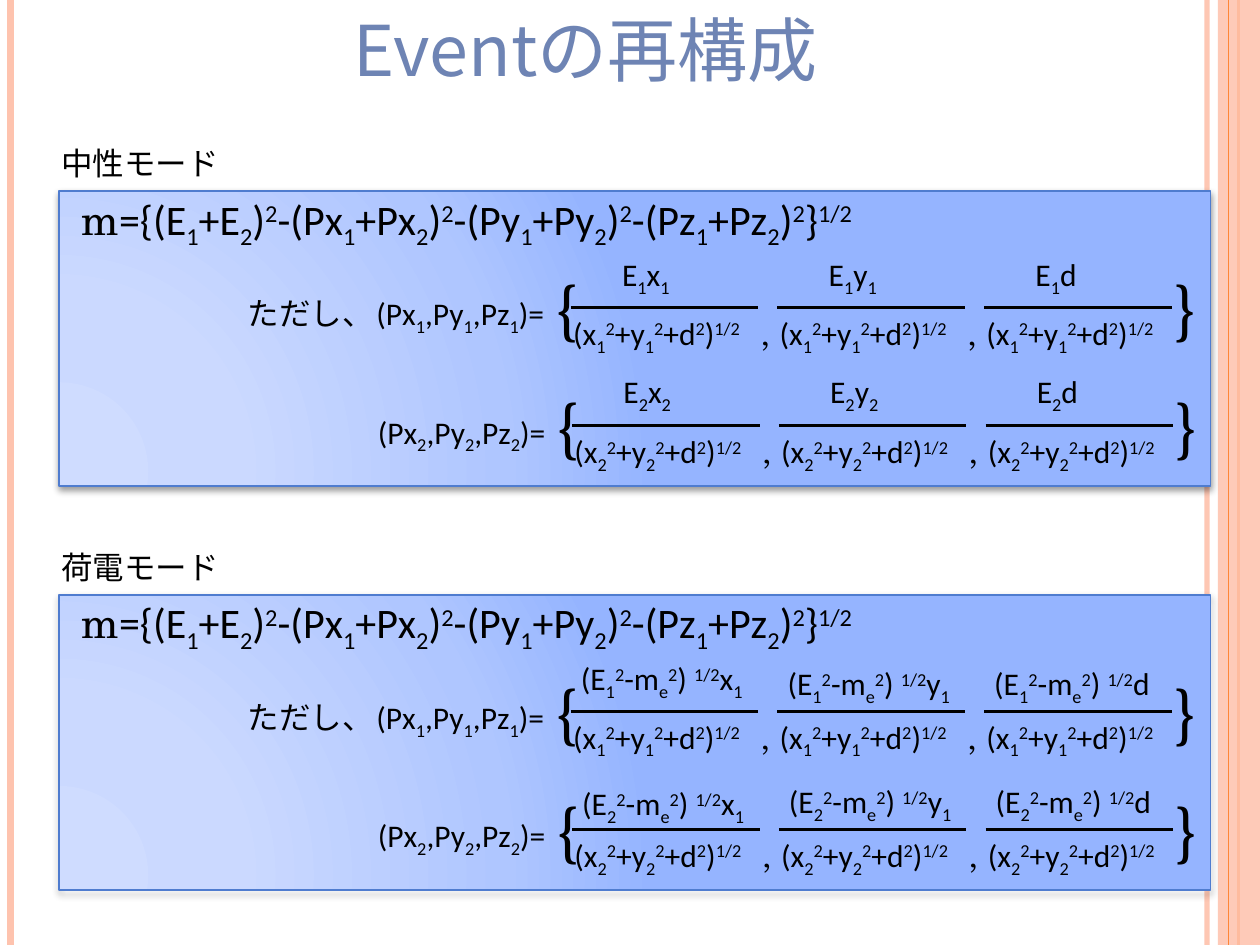
import pptx
import pptx.util
import pptx.dml.color
import pptx.enum.shapes
import pptx.enum.text
import pptx.oxml
import pptx.oxml.ns

Pt = pptx.util.Pt
LATIN, SERIF, JAPANESE = "Calibri", "TeX Gyre Schola", "Noto Sans CJK JP"
NAMESPACE = 'xmlns:a="http://schemas.openxmlformats.org/drawingml/2006/main"'
BASELINES = {"_": "-25000", "^": "30000"}

TITLE = "Eventの再構成"
PROVISO = "ただし、"
MASS = ("={(E|_1|+E|_2|)|^2|-(Px|_1|+Px|_2|)|^2|-(Py|_1|+Py|_2|)|^2"
        "|-(Pz|_1|+Pz|_2|)|^2|}|^1/2")
MOMENTUM = "(Px|_#|,Py|_#|,Pz|_#|)="
DENOMINATOR = "(x|_#|^2|+y|_#|^2|+d|^2|)|^1/2"
CHARGED_ENERGY = "(E|_#|^2|-m|_e|^2|) |^1/2|"
MODES = [
    {"name": "中性モード", "top": 109.3, "indent": 28, "widths": (44, 44, 39),
     "numerators": [("E|_#|x|_#", "E|_#|y|_#", "E|_#|d")] * 2,
     "rises": [(33, 33, 33), (32.5, 32.5, 32.5)]},
    {"name": "荷電モード", "top": 340, "indent": 4.4, "widths": (114.5, 114.5, 110),
     "numerators": [tuple(CHARGED_ENERGY + end for end in ("x|_1", "y|_1", "d"))] * 2,
     "rises": [(33, 36, 36), (37, 36, 36)]},
]
STRIPES = [(689.8, "FEC3AE", 3, 93), (6, "FEC3AE", 4.5, 100),
           (707.8, "FE8637", 1.5, 100), (702, "FE8637", 0.75, 100)]
GRADIENT = [(0, "CFDCFF"), (30, "CBD9FF"), (75, "AFC6FF"), (100, "95B4FF")]

PANEL_LEFT, PANEL_WIDTH, PANEL_HEIGHT = 33.8, 658, 168.5
ROW_STEP, ROW_SHIFT = 67.5, 0.8
COLUMN_LEFT, COLUMN_STEP = 320.4, 118.1
BAR_DROP = 66.5


def color(value):
    return pptx.dml.color.RGBColor.from_string(value)


def apply(target, values):
    for name, value in values.items():
        setattr(target, name, value)


def set_alpha(element, percent):
    if percent < 100:
        fill_color = next(element.iter(pptx.oxml.ns.qn("a:srgbClr")))
        fill_color.append(pptx.oxml.parse_xml(f'<a:alpha {NAMESPACE} val="{percent * 1000}"/>'))


def add_line(shapes, start, end, line_color, width, alpha=100):
    line = shapes.add_connector(pptx.enum.shapes.MSO_CONNECTOR.STRAIGHT,
                                *[Pt(value) for value in start + end])
    line.line.color.rgb = color(line_color)
    line.line.width = Pt(width)
    properties = line._element.spPr
    set_alpha(properties, alpha)
    properties.append(pptx.oxml.parse_xml(f"<a:effectLst {NAMESPACE}/>"))


def add_text(shapes, box, pieces, size=18, wrap=True, text_color="000000", align=None):
    frame = shapes.add_textbox(*[Pt(value) for value in box]).text_frame
    apply(frame, {"word_wrap": wrap,
                  "auto_size": pptx.enum.text.MSO_AUTO_SIZE.SHAPE_TO_FIT_TEXT})
    paragraph = frame.paragraphs[0]
    paragraph.alignment = align
    for markup, font in pieces:
        for part in markup.split("|"):
            run = paragraph.add_run()
            run.text = part.lstrip("_^")
            apply(run.font, {"size": Pt(size), "name": font})
            run.font.color.rgb = color(text_color)
            properties = run._r.get_or_add_rPr()
            if part[0] in BASELINES:
                properties.set("baseline", BASELINES[part[0]])
            if font == JAPANESE:
                properties.append(pptx.oxml.parse_xml(
                    f'<a:ea {NAMESPACE} typeface="{font}"/>'))


def add_rectangle(shapes, box):
    return shapes.add_shape(pptx.enum.shapes.MSO_SHAPE.RECTANGLE,
                            *[Pt(value) for value in box])


def add_panel(shapes, top):
    panel = add_rectangle(shapes, (PANEL_LEFT, top, PANEL_WIDTH, PANEL_HEIGHT))
    panel.line.color.rgb = color("4F7CCF")
    panel.line.width = Pt(1)
    stops = "".join(f'<a:gs pos="{position * 1000}"><a:srgbClr val="{value}"/></a:gs>'
                    for position, value in GRADIENT)
    properties = panel._element.spPr
    properties.find(pptx.oxml.ns.qn("a:prstGeom")).addnext(pptx.oxml.parse_xml(
        f'<a:gradFill {NAMESPACE} rotWithShape="1"><a:gsLst>{stops}</a:gsLst>'
        '<a:path path="circle"><a:fillToRect l="5000" t="100000" r="120000" b="10000"/>'
        '</a:path></a:gradFill>'))
    properties.append(pptx.oxml.parse_xml(
        f'<a:effectLst {NAMESPACE}><a:outerShdw blurRad="50800" dist="25400" dir="5400000" '
        'rotWithShape="0"><a:srgbClr val="000000"><a:alpha val="40000"/></a:srgbClr>'
        '</a:outerShdw></a:effectLst>'))


def add_momentum(shapes, mode, row):
    index = str(row + 1)
    top = mode["top"] + row * ROW_STEP
    shift = row * ROW_SHIFT
    bar = top + BAR_DROP
    add_text(shapes, (208 + shift, top + 55.4, 129.6, 29),
             [(MOMENTUM.replace("#", index), LATIN)])
    for column, numerator in enumerate(mode["numerators"][row]):
        left = COLUMN_LEFT + shift + column * COLUMN_STEP
        add_text(shapes, (left, bar, 124, 29), [(DENOMINATOR.replace("#", index), LATIN)])
        add_text(shapes, (left + mode["indent"], top + mode["rises"][row][column],
                          mode["widths"][column], 29),
                 [(numerator.replace("#", index), LATIN)], wrap=False)
        add_line(shapes, (left + 5.8, bar), (left + 113, bar), "000000", 1.5)
        if column < 2:
            add_text(shapes, (left + 107.3, bar, 22.3, 29), [(",", SERIF)])
    for brace, left in (("{", 309.6), ("}", 663.8)):
        add_text(shapes, (left + shift, top + 38.8, 22.3, 55.4), [(brace, SERIF)], size=40)


def add_mode(slide, mode):
    top = mode["top"]
    shapes = slide.shapes.add_group_shape().shapes
    add_panel(shapes, top)
    add_text(shapes, (39.6, top - 2.5, 523.4, 36), [("m", SERIF), (MASS, LATIN)], size=24)
    for row in range(2):
        add_momentum(shapes, mode, row)
    add_text(shapes, (134.6, top + 55.4, 73.4, 29), [(PROVISO, JAPANESE)])
    add_text(slide.shapes, (28, top - 30.6, 124, 29), [(mode["name"], JAPANESE)])


def main():
    presentation = pptx.Presentation()
    apply(presentation, {"slide_width": Pt(720), "slide_height": Pt(540)})
    slide = presentation.slides.add_slide(presentation.slide_layouts[6])
    for stripe_left, *style in STRIPES[:3]:
        add_line(slide.shapes, (stripe_left, 0), (stripe_left, 540), *style)
    band = add_rectangle(slide.shapes, (696, 0, 24, 540))
    band.shadow.inherit = False
    band.fill.solid()
    band.fill.fore_color.rgb = color("FEC3AE")
    band.line.fill.background()
    set_alpha(band._element.spPr, 87)
    stripe_left, *style = STRIPES[3]
    add_line(slide.shapes, (stripe_left, 0), (stripe_left, 540), *style)
    add_text(slide.shapes, (174.2, 0, 320.4, 55.4), [(TITLE, JAPANESE)], size=40,
             text_color="6E84B4", align=pptx.enum.text.PP_ALIGN.CENTER)
    for mode in MODES:
        add_mode(slide, mode)
    presentation.save("out.pptx")


if __name__ == "__main__":
    main()
